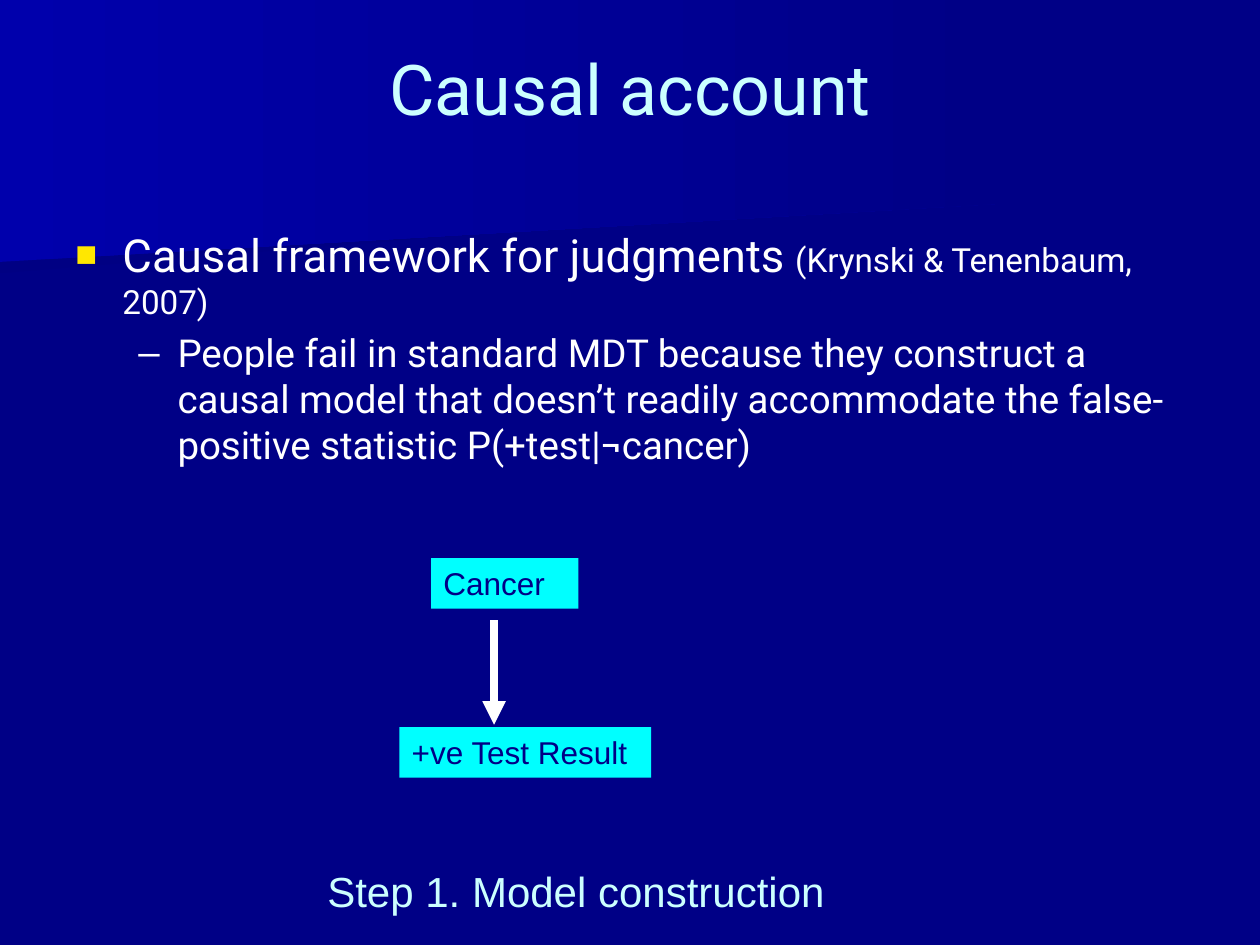
from lxml import etree
from pptx import Presentation
from pptx import util as u
from pptx.dml.color import RGBColor
from pptx.enum import shapes, text
from pptx.oxml.ns import qn

NAVY, WHITE, PALE, CYAN, YELLOW = "000086", "FFFFFF", "CCFFFF", "00FFFF", "FFE701"


def colour(code):
    return RGBColor.from_string(code)


def add_xml(parent, tag, **values):
    return etree.SubElement(parent, qn(tag), **values)


class SlideBuilder:
    """Holds the style and the current page; one method per kind of element."""

    heading_font, label_font = "Roboto", "Arial"

    def __init__(self, page):
        self.page = page
        fill = page.background.fill
        fill.solid()
        fill.fore_color.rgb = colour(NAVY)

    def band(self, points, start):
        """Polygon fading from the start colour into the background."""
        corners = [(u.Cm(x), u.Cm(y)) for x, y in points]
        outline = self.page.shapes.build_freeform(*corners[0])
        outline.add_line_segments(corners[1:], close=True)
        shape = outline.convert_to_shape()
        shape.shadow.inherit = False
        shape.line.fill.background()
        shape.fill.gradient()
        shape.fill.gradient_angle = 0
        for stop, code in zip(shape.fill.gradient_stops, (start, NAVY)):
            stop.color.rgb = colour(code)

    def span(self, para, words, size, code, font):
        span = para.add_run()
        span.text = words
        values = {"size": u.Pt(size), "name": font}
        for name, value in values.items():
            setattr(span.font, name, value)
        span.font.color.rgb = colour(code)

    def text_box(self, left, top, width, height, **frame_values):
        box = self.page.shapes.add_textbox(*map(u.Cm, (left, top, width, height)))
        for name, value in {"word_wrap": True, **frame_values}.items():
            setattr(box.text_frame, name, value)
        return box.text_frame

    def bullet(self, para, mark, code, percent, indent, hanging, before):
        para.space_before = u.Pt(before)
        props = para._p.get_or_add_pPr()
        props.set("marL", str(u.Cm(indent)))
        props.set("indent", str(-u.Cm(hanging)))
        add_xml(add_xml(props, "a:buClr"), "a:srgbClr", val=code)
        add_xml(props, "a:buSzPct", val=str(percent * 1000))
        add_xml(props, "a:buFont", typeface=self.label_font)
        add_xml(props, "a:buChar", char=mark)

    def node(self, words, left, top, width, height=1.02):
        box = self.page.shapes.add_shape(
            shapes.MSO_SHAPE.RECTANGLE, *map(u.Cm, (left, top, width, height)))
        box.shadow.inherit = False
        box.fill.solid()
        box.fill.fore_color.rgb = colour(CYAN)
        box.line.fill.background()
        box.text_frame.vertical_anchor = text.MSO_ANCHOR.TOP
        para = box.text_frame.paragraphs[0]
        para.alignment = text.PP_ALIGN.LEFT
        self.span(para, words, 18, NAVY, self.label_font)

    def arrow(self, *ends):
        line = self.page.shapes.add_connector(
            shapes.MSO_CONNECTOR.STRAIGHT, *map(u.Cm, ends))
        line.line.width = u.Pt(4.5)
        line.line.color.rgb = colour(WHITE)
        add_xml(line.line._get_or_add_ln(), "a:tailEnd", type="triangle")
        add_xml(line._element.spPr, "a:effectLst")


def main():
    deck = Presentation()
    deck.slide_width, deck.slide_height = u.Cm(25.4), u.Cm(19.05)
    slide = SlideBuilder(deck.slides.add_slide(deck.slide_layouts[6]))

    # Background bands
    slide.band([(19.76, 3.89), (0, 5.51), (0, 2.57), (19.79, 2.57), (19.76, 3.25)],
               "000083")
    slide.band([(20.12, 4.11), (0, 5.28), (0, 0), (20.12, 0)], "0000AC")

    # Title, raised within its box by the bottom margin
    title = slide.text_box(1.27, 0.76, 22.86, 3.18, margin_bottom=u.Cm(1.3),
                           vertical_anchor=text.MSO_ANCHOR.MIDDLE).paragraphs[0]
    title.alignment = text.PP_ALIGN.CENTER
    slide.span(title, "Causal account", 40, PALE, slide.heading_font)

    # Bulleted argument
    body = slide.text_box(1.27, 4.45, 22.86, 5.26)
    claim, reason = body.paragraphs[0], body.add_paragraph()
    reason.level = 1
    slide.bullet(claim, "■", YELLOW, 80, 0.95, 0.95, 5.2)
    slide.bullet(reason, "–", WHITE, 100, 2.06, 0.79, 4.4)
    for para, words, size in (
        (claim, "Causal framework for judgments", 26),
        (claim, " ", 22),
        (claim, "(Krynski & Tenenbaum, 2007)", 19),
        (reason, "People fail in standard MDT because they construct a causal "
                 "model that doesn’t readily accommodate the false-positive "
                 "statistic P(+test|¬cancer)", 22),
    ):
        slide.span(para, words, size, WHITE, slide.heading_font)

    # Causal model
    slide.node("Cancer", 8.69, 11.25, 2.97)
    slide.node("+ve Test Result", 8.05, 14.66, 5.08)
    slide.arrow(9.96, 12.5, 9.96, 14.61)

    # Step caption
    caption = slide.text_box(6.35, 17.32, 11.43, 1.27).paragraphs[0]
    slide.span(caption, "Step 1. Model construction", 24, PALE, slide.label_font)

    deck.save("out.pptx")


if __name__ == "__main__":
    main()
